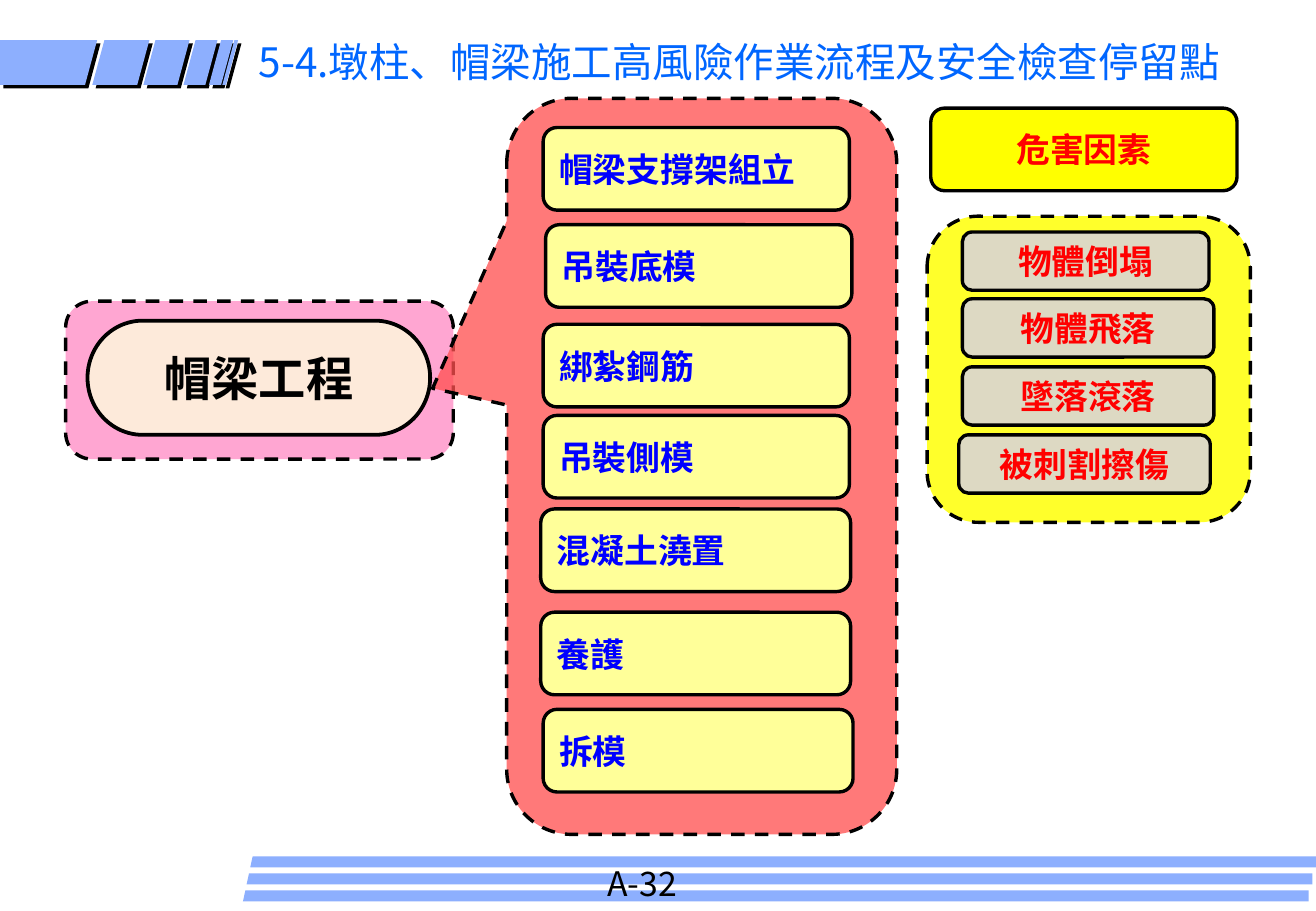
import pptx
import pptx.dml.color
import pptx.enum.dml
import pptx.enum.shapes
import pptx.enum.text
import pptx.oxml.ns
import pptx.util
from lxml import etree

Inches = pptx.util.Inches
Pt = pptx.util.Pt
KIND = pptx.enum.shapes.MSO_SHAPE
ALIGN = pptx.enum.text.PP_ALIGN
qn = pptx.oxml.ns.qn

FACE = "Noto Sans CJK SC"
HEX = {
    "band": "8DAFFE", "black": "000000", "title": "0066FF",
    "pink": "FF99CC", "peach": "FDEADA", "coral": "FF5050",
    "yellow": "FFFF00", "cream": "FFFF99", "sand": "DDD9C3",
    "blue": "0000FF", "red": "FF0000",
}
STEPS = [
    ("帽梁支撐架組立", 4.47, 1.05, 2.52),
    ("吊裝底模", 4.49, 1.85, 2.52),
    ("綁紮鋼筋", 4.47, 2.67, 2.52),
    ("吊裝側模", 4.47, 3.42, 2.52),
    ("混凝土澆置", 4.45, 4.19, 2.55),
    ("養護", 4.45, 5.04, 2.55),
    ("拆模", 4.47, 5.84, 2.55),
]
RISKS = [
    ("物體倒塌", 7.92, 1.91, 2.03),
    ("物體飛落", 7.92, 2.46, 2.07),
    ("墜落滾落", 7.92, 3.02, 2.07),
    ("被刺割擦傷", 7.89, 3.58, 2.07),
]
# Left and right ends of the top edge of each slanted block
BLOCKS = [(0, 0.8), (0.86, 1.23), (1.28, 1.56), (1.61, 1.79), (1.82, 1.92), (1.93, 1.96)]


def rgb(name):
    return pptx.dml.color.RGBColor.from_string(HEX[name])


def paint(shape, name):
    shape.shadow.inherit = False
    shape.fill.solid()
    shape.fill.fore_color.rgb = rgb(name)


def write(shape, text, size, color, bold=False, align=ALIGN.LEFT, **extra):
    frame = shape.text_frame
    frame.word_wrap = True
    para = frame.paragraphs[0]
    for key, value in {"alignment": align, **extra}.items():
        setattr(para, key, value)
    run = para.add_run()
    run.text = text
    for key, value in {"size": Pt(size), "bold": bold, "name": FACE}.items():
        setattr(run.font, key, value)
    run.font.color.rgb = rgb(color)
    etree.SubElement(run.font._element, qn("a:ea"), typeface=FACE)


def label(slide, spot, *words, **extra):
    write(slide.shapes.add_textbox(*map(Inches, spot)), *words, **extra)


def box(slide, kind, spot, fill, width=2):
    shape = slide.shapes.add_shape(kind, *map(Inches, spot))
    paint(shape, fill)
    shape.line.color.rgb = rgb("black")
    shape.line.width = Pt(width)
    shape.text_frame.vertical_anchor = pptx.enum.text.MSO_ANCHOR.MIDDLE
    return shape


def card(slide, spot, text, fill, color, align=ALIGN.CENTER):
    shape = box(slide, KIND.FLOWCHART_ALTERNATE_PROCESS, spot, fill)
    write(shape, text, 20, color, True, align)


def callout(slide, spot, fill, alpha, tip):
    """Dashed, see-through bubble; tip is its point relative to the centre."""
    shape = box(slide, KIND.ROUNDED_RECTANGULAR_CALLOUT, spot, fill)
    shape.line.dash_style = pptx.enum.dml.MSO_LINE.DASH
    for index, value in enumerate((*tip, 0.167)):
        shape.adjustments[index] = value
    color = shape._element.spPr.find(qn("a:solidFill")).find(qn("a:srgbClr"))
    etree.SubElement(color, qn("a:alpha"), val=str(alpha * 1000))


def band(slide, points):
    first, *rest = [(Inches(x), Inches(y)) for x, y in points]
    pen = slide.shapes.build_freeform(*first)
    pen.add_line_segments(rest)
    shape = pen.convert_to_shape()
    paint(shape, "band")
    shape.line.fill.background()
    return shape


def shade(shape):
    """Hard black shadow to the lower right."""
    effect = shape._element.spPr.find(qn("a:effectLst"))
    outer = etree.SubElement(effect, qn("a:outerShdw"), blurRad="0",
                             dist=str(Pt(2.8)), dir=str(45 * 60000), algn="ctr",
                             rotWithShape="0")
    etree.SubElement(outer, qn("a:srgbClr"), val=HEX["black"])


def decor(slide):
    for row in range(3):
        left, top = 2 + 0.03 * row, 7.33 - 0.14 * row
        right, base = left + 8.77, top + 0.09
        band(slide, [(left, base), (right, base), (right, top), (left + 0.02, top)])
    for left, right in BLOCKS:
        foot = max(left - 0.1, 0)
        shade(band(slide, [(left, 0.33), (right, 0.33), (right - 0.1, 0.7), (foot, 0.7)]))
    label(slide, (4.9, 7.05, 1.21, 0.44), "A-32", 20, "black")


def main():
    deck = pptx.Presentation()
    deck.slide_width, deck.slide_height = Inches(10.83), Inches(7.5)
    slide = deck.slides.add_slide(deck.slide_layouts[6])
    decor(slide)
    label(slide, (2.03, 0.33, 8.66, 0.42), "5-4.墩柱、帽梁施工高風險作業流程及安全檢查停留點",
          24, "title", line_spacing=0.8)

    callout(slide, (0.54, 2.48, 3.19, 1.3), "pink", 87, (-0.13, -0.5))
    work = box(slide, KIND.FLOWCHART_TERMINATOR, (0.72, 2.64, 2.82, 0.94), "peach", 2.25)
    write(work, "帽梁工程", 28, "black", True, ALIGN.CENTER)

    callout(slide, (4.17, 0.81, 3.21, 6.06), "coral", 76, (-0.69, -0.106))
    for text, left, top, width in STEPS:
        card(slide, (left, top, width, 0.68), text, "cream", "blue", ALIGN.LEFT)

    card(slide, (7.66, 0.89, 2.52, 0.68), "危害因素", "yellow", "red")
    callout(slide, (7.63, 1.78, 2.66, 2.52), "yellow", 83, (-0.29, -0.5))
    for text, left, top, width in RISKS:
        card(slide, (left, top, width, 0.48), text, "sand", "red")
    deck.save("out.pptx")


if __name__ == "__main__":
    main()
